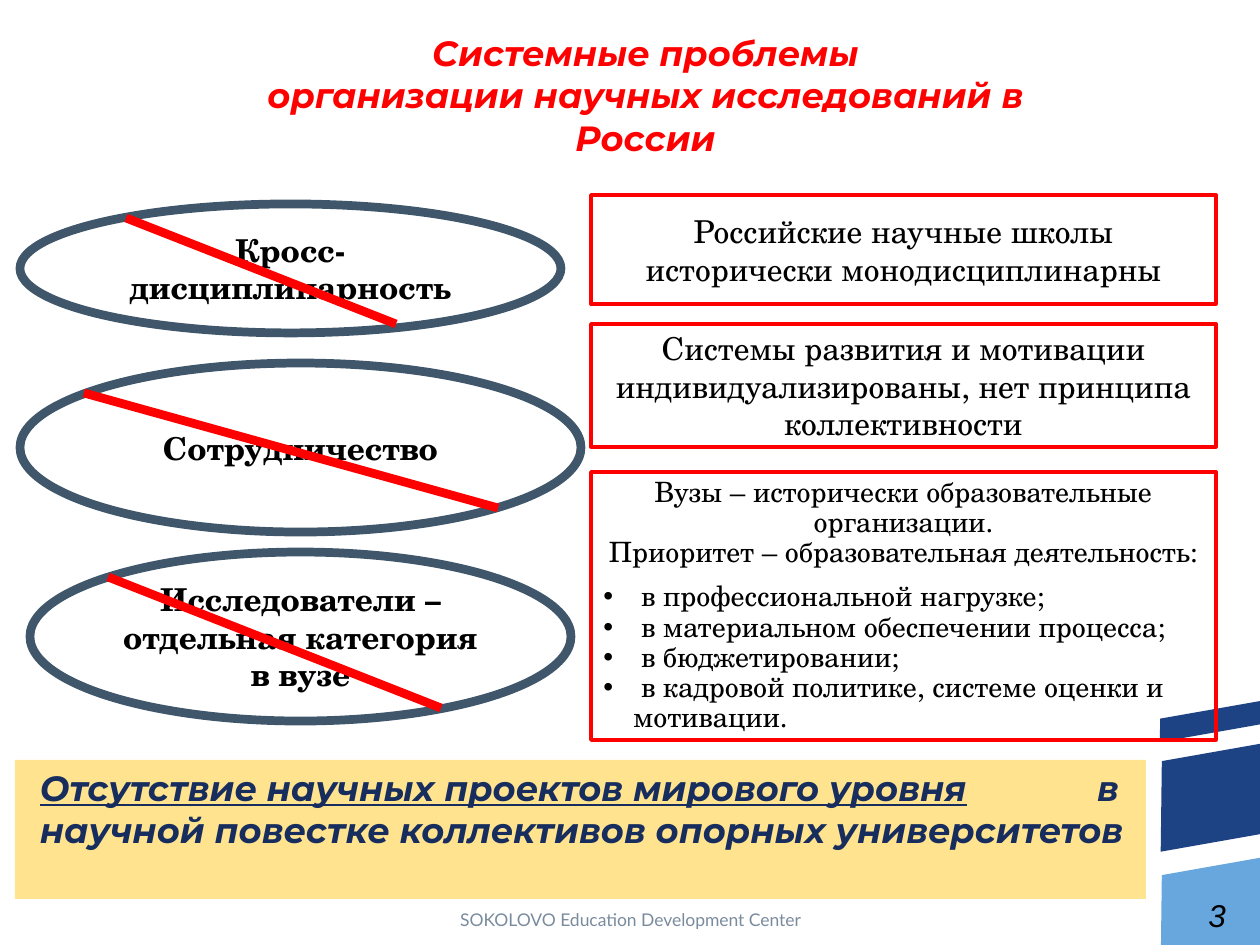
from dataclasses import dataclass

from lxml.etree import SubElement
from pptx import Presentation
from pptx.dml.color import RGBColor
from pptx.enum.shapes import MSO_CONNECTOR, MSO_SHAPE
from pptx.enum.text import MSO_ANCHOR, PP_ALIGN
from pptx.oxml.ns import qn
from pptx.util import Emu, Pt

INK = {"red": "FF0000", "slate": "40576B", "navy": "162D5E", "blue": "1E4385",
       "sky": "67A7DE", "gold": "FFC000", "gray": "7A8B9E", "black": "000000"}
SERIF = "TeX Gyre Schola"


@dataclass
class Box:
    x: int
    y: int
    w: int
    h: int


@dataclass
class Font:
    name: str
    size: int
    ink: str = "black"
    bold: bool = False
    slant: bool = False


@dataclass
class Idea:
    box: Box
    text: str
    start: tuple
    end: tuple


@dataclass
class Cause:
    box: Box
    size: int
    lines: list
    items: list


HEAD = Font("Montserrat", 20, "red", True, True)
CLAIM = Font("Montserrat", 20, "navy", True, True)
BANDS = [(Box(1152, 752, 131, 89), "blue"), (Box(1157, 709, 118, 23), "blue"),
         (Box(1152, 866, 131, 89), "sky")]
IDEAS = [
    Idea(Box(20, 204, 541, 129), "Кросс-дисциплинарность", (126, 218), (396, 324)),
    Idea(Box(20, 363, 561, 169), "Сотрудничество", (84, 393), (498, 508)),
    Idea(Box(30, 552, 541, 169), "Исследователи – отдельная категория в вузе",
         (108, 577), (441, 708)),
]
CAUSES = [
    Cause(Box(591, 195, 625, 109), 18,
          ["Российские научные школы исторически монодисциплинарны"], []),
    Cause(Box(591, 324, 625, 123), 18,
          ["Системы развития и мотивации индивидуализированы, "
           "нет принципа коллективности"], []),
    Cause(Box(591, 472, 625, 268), 16,
          ["Вузы – исторически образовательные организации.",
           "Приоритет – образовательная деятельность:"],
          [" в профессиональной нагрузке;", " в материальном обеспечении процесса;",
           " в бюджетировании;", " в кадровой политике, системе оценки и мотивации."]),
]


def px(n: int) -> Emu:
    """Turn px into EMU."""
    return Emu(round(n * 914400 / 126))


def tint(ink: str) -> RGBColor:
    """Look up a colour."""
    return RGBColor.from_string(INK[ink])


def place(box: Box) -> list:
    """Give left, top, width and height in EMU."""
    return [px(n) for n in (box.x, box.y, box.w, box.h)]


def shape(slide, kind, box: Box, fill: str = "", line: str = "", width: int = 0):
    """Draw a preset shape."""
    item = slide.shapes.add_shape(kind, *place(box))
    item.shadow.inherit = False
    if fill:
        item.fill.solid()
        item.fill.fore_color.rgb = tint(fill)
    else:
        item.fill.background()
    if line:
        item.line.color.rgb = tint(line)
        item.line.width = Pt(width)
    else:
        item.line.fill.background()
    item.text_frame.word_wrap = True
    return item


def label(slide, box: Box, anchor, wrap: bool = True):
    """Add a text box and return its frame."""
    frame = slide.shapes.add_textbox(*place(box)).text_frame
    frame.word_wrap = wrap
    frame.vertical_anchor = anchor
    return frame


def write(para, text: str, font: Font, line: bool = False) -> None:
    """Add one run."""
    run = para.add_run()
    run.text = text
    face = run.font
    face.name, face.size = font.name, Pt(font.size)
    face.bold, face.italic, face.underline = font.bold, font.slant, line
    face.color.rgb = tint(font.ink)


def strike(slide, start: tuple, end: tuple) -> None:
    """Draw a red strike line."""
    line = slide.shapes.add_connector(
        MSO_CONNECTOR.STRAIGHT, *[px(n) for n in start + end])
    line.line.color.rgb = tint("red")
    line.line.width = Pt(5)
    SubElement(line._element.spPr, qn("a:effectLst"))


def bullet(para) -> None:
    """Give a paragraph a hanging bullet."""
    props = para._p.get_or_add_pPr()
    props.set("marL", str(px(30)))
    props.set("indent", str(-px(30)))
    SubElement(props, qn("a:buFont"), typeface="Arial")
    SubElement(props, qn("a:buChar"), char="•")


def explain(slide, cause: Cause) -> None:
    """Draw a framed cause with its bullets."""
    frame = shape(slide, MSO_SHAPE.RECTANGLE, cause.box, line="red", width=2).text_frame
    frame.vertical_anchor = MSO_ANCHOR.MIDDLE
    count = len(cause.lines)
    for i, text in enumerate(cause.lines + cause.items):
        para = frame.add_paragraph() if i else frame.paragraphs[0]
        if i < count:
            para.alignment = PP_ALIGN.CENTER
        else:
            bullet(para)
            para.alignment = PP_ALIGN.LEFT
        if cause.items:
            para.line_spacing = 0.9
        if i == count:
            para.space_before = Pt(8)
        write(para, text, Font(SERIF, cause.size))


def claim(slide) -> None:
    """Draw the closing banner."""
    item = shape(slide, MSO_SHAPE.RECTANGLE, Box(15, 760, 1131, 139), "gold")
    hue = item.fill._xPr.find(qn("a:solidFill"))[0]
    SubElement(hue, qn("a:alpha"), val="44000")
    frame = item.text_frame
    frame.vertical_anchor = MSO_ANCHOR.TOP
    frame.margin_left = px(25)
    para = frame.paragraphs[0]
    tabs = SubElement(para._p.get_or_add_pPr(), qn("a:tabLst"))
    SubElement(tabs, qn("a:tab"), pos=str(px(1079)), algn="r")
    para.alignment = PP_ALIGN.LEFT
    write(para, "Отсутствие научных проектов мирового уровня\t", CLAIM, True)
    write(para, "в", CLAIM)
    para.add_line_break()
    write(para, "научной повестке коллективов опорных университетов", CLAIM)


def main() -> None:
    """Build the slide."""
    deck = Presentation()
    deck.slide_width, deck.slide_height = px(1260), px(945)
    slide = deck.slides.add_slide(deck.slide_layouts[6])
    for box, ink in BANDS:
        band = shape(slide, MSO_SHAPE.PARALLELOGRAM, box, ink)
        band.adjustments[0] = 0.19
        band.rotation = 350
    claim(slide)

    foot = label(slide, Box(431, 897, 399, 45), MSO_ANCHOR.MIDDLE).paragraphs[0]
    foot.alignment = PP_ALIGN.CENTER
    write(foot, "SOKOLOVO Education Development Center", Font("Lato", 10, "gray"))

    frame = label(slide, Box(233, 45, 825, 118), MSO_ANCHOR.BOTTOM)
    frame.margin_left = frame.margin_right = px(5)
    frame.margin_top = frame.margin_bottom = px(5)
    title = frame.paragraphs[0]
    title.alignment = PP_ALIGN.CENTER
    write(title, "Системные проблемы", HEAD)
    title.add_line_break()
    write(title, "организации научных исследований в России", HEAD)

    for idea in IDEAS:
        oval = shape(slide, MSO_SHAPE.OVAL, idea.box, line="slate", width=5)
        oval.text_frame.vertical_anchor = MSO_ANCHOR.MIDDLE
        para = oval.text_frame.paragraphs[0]
        para.alignment = PP_ALIGN.CENTER
        write(para, idea.text, Font(SERIF, 18, bold=True))
    for idea in IDEAS:
        strike(slide, idea.start, idea.end)
    for cause in CAUSES:
        explain(slide, cause)

    page = label(slide, Box(1196, 890, 43, 50), MSO_ANCHOR.TOP, False).paragraphs[0]
    write(page, "3", Font("Arial", 18, slant=True))
    deck.save("out.pptx")


if __name__ == "__main__":
    main()
